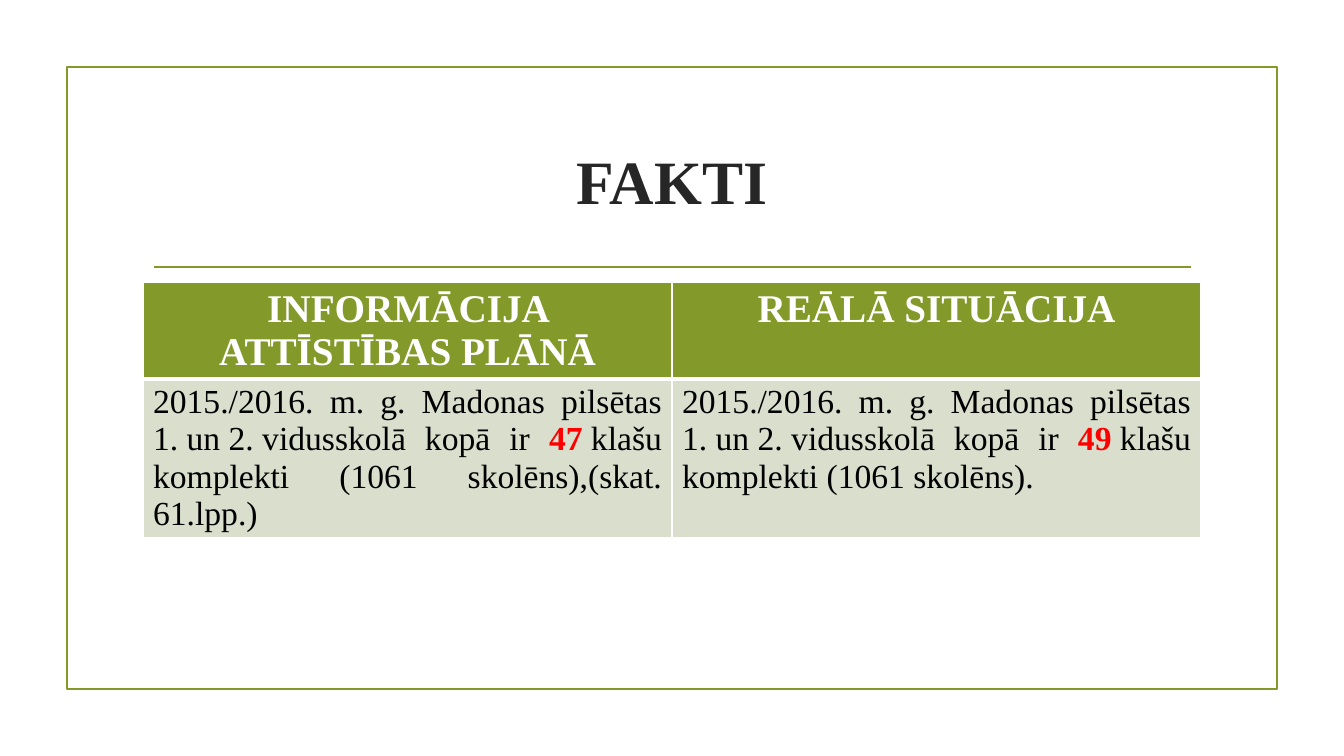
from lxml import etree
from pptx import Presentation
from pptx import util as u
from pptx.dml.color import RGBColor
from pptx.enum import shapes, text
from pptx.oxml.ns import qn

# Content
NBSP = chr(160)
TITLE = "FAKTI"
HEADERS = ["INFORMĀCIJA ATTĪSTĪBAS PLĀNĀ", "REĀLĀ SITUĀCIJA"]
SCHOOLS = NBSP.join(["1.", "un", "2.", "vidusskolā"])
INTRO = f"2015./2016. m. g. Madonas pilsētas {SCHOOLS} kopā ir "
FACTS = [  # class count, text after it
    ("47", f"{NBSP}klašu komplekti (1061 skolēns),(skat. 61.lpp.)"),
    ("49", f"{NBSP}klašu komplekti (1061 skolēns)."),
]

# Style and layout
COLORS = {"green": "83992A", "pale": "D9DECD", "white": "FFFFFF",
          "title": "262626", "black": "000000", "red": "FF0000"}
FONT = "Times New Roman"
FRAME = (67, 67, 1210, 622)
TITLE_BOX = (143, 108, 1058, 144)
RULE = (154, 267, 1191, 267)
TABLE = (143, 282, 1058, 254)
ROW_HEIGHTS = [96, 158]


def px(length):
    return u.Emu(round(length * 914400 / 100.8))


def color(name):
    return RGBColor.from_string(COLORS[name])


def set_font(font, size, name, bold):
    font.name, font.size, font.bold = FONT, u.Pt(size), bold
    font.color.rgb = color(name)


def set_line(line):
    line.color.rgb = color("green")
    line.width = u.Pt(1.25)


def set_borders(cell, bottom):
    properties = cell._tc.get_or_add_tcPr()
    for index, side in enumerate(("lnL", "lnR", "lnT", "lnB")):
        width = bottom if side == "lnB" else 1
        border = etree.Element(qn(f"a:{side}"), w=str(u.Pt(width)))
        fill = etree.SubElement(border, qn("a:solidFill"))
        etree.SubElement(fill, qn("a:srgbClr"), val=COLORS["white"])
        properties.insert(index, border)


deck = Presentation()
deck.slide_width, deck.slide_height = u.Inches(13.333), u.Inches(7.5)
page = deck.slides.add_slide(deck.slide_layouts[5])

# Frame and rule
frame = page.shapes.add_shape(shapes.MSO_SHAPE.RECTANGLE, *map(px, FRAME))
frame.shadow.inherit = False
frame.fill.background()
set_line(frame.line)
rule = page.shapes.add_connector(shapes.MSO_CONNECTOR.STRAIGHT, *map(px, RULE))
set_line(rule.line)
etree.SubElement(rule._element.spPr, qn("a:effectLst"))

# Title
title = page.shapes.title
title.left, title.top, title.width, title.height = map(px, TITLE_BOX)
title.text_frame.text = TITLE
title.text_frame.vertical_anchor = text.MSO_ANCHOR.MIDDLE
para = title.text_frame.paragraphs[0]
para.alignment = text.PP_ALIGN.CENTER
set_font(para.font, 44, "title", True)

# Table
table = page.shapes.add_table(2, len(HEADERS), *map(px, TABLE)).table
for row, height in zip(table.rows, ROW_HEIGHTS):
    row.height = px(height)
for column, (header, (count, ending)) in enumerate(zip(HEADERS, FACTS)):
    cell = table.cell(0, column)
    cell.fill.solid()
    cell.fill.fore_color.rgb = color("green")
    set_borders(cell, 3)
    cell.text = header
    para = cell.text_frame.paragraphs[0]
    para.alignment = text.PP_ALIGN.CENTER
    set_font(para.font, 28, "white", True)

    cell = table.cell(1, column)
    cell.fill.solid()
    cell.fill.fore_color.rgb = color("pale")
    set_borders(cell, 1)
    para = cell.text_frame.paragraphs[0]
    para.alignment = text.PP_ALIGN.JUSTIFY
    for words, name in ((INTRO, "black"), (count, "red"), (ending, "black")):
        span = para.add_run()
        span.text = words
        set_font(span.font, 24, name, name == "red")

deck.save("out.pptx")
